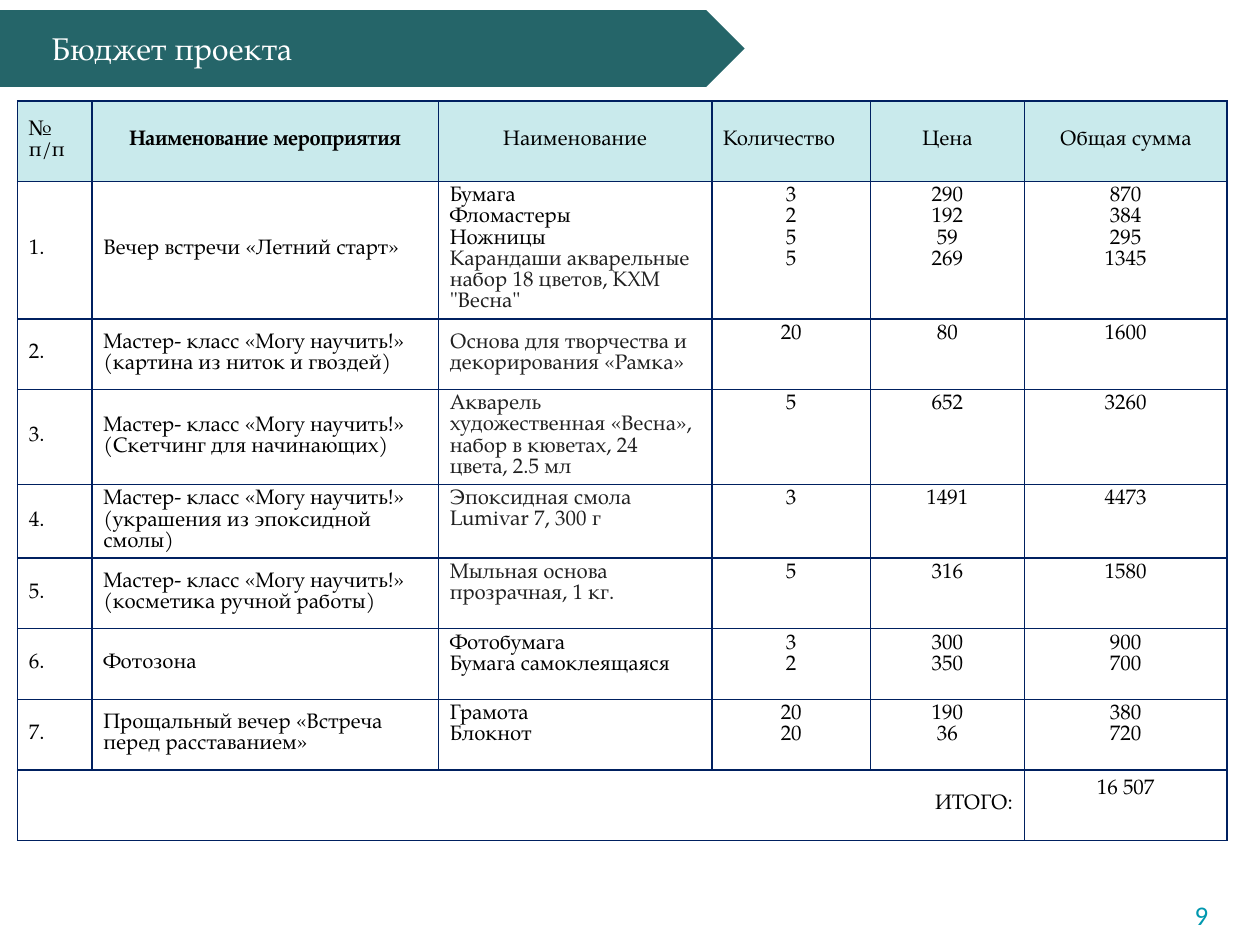
"""Build the project budget slide with its table of events and costs."""
from dataclasses import dataclass

from lxml.etree import SubElement
from pptx import Presentation
from pptx.dml.color import RGBColor
from pptx.enum.shapes import MSO_SHAPE
from pptx.enum.text import MSO_ANCHOR, PP_ALIGN
from pptx.oxml.ns import qn
from pptx.util import Inches, Pt


@dataclass(frozen=True)
class Theme:
    """Colours, fonts and type sizes of the deck."""
    ribbon: str = "256569"
    header: str = "C9EAEC"
    paper: str = "FFFFFF"
    border: str = "002060"
    ink: str = "000000"
    soft_ink: str = "212121"
    accent: str = "0098AF"
    serif: str = "TeX Gyre Pagella"
    sans: str = "Calibri"
    title_size: float = 18
    body_size: float = 12
    number_size: float = 15.4
    border_width: float = 1


THEME = Theme()
UNIT = 0.1
COLUMN_WIDTHS = [5.9, 27.5, 21.7, 12.6, 12.2, 16.1]
HEADER_HEIGHT, ROW_HEIGHT = 6.4, 5.6
HEADINGS = ["№\nп/п", "Наименование мероприятия", "Наименование", "Количество", "Цена", "Общая сумма"]
CENTRED_HEADINGS = {1, 2, 4, 5}
BOLD_HEADING = 1
MIDDLE_ITEMS_ROW = 2
SOFT, INK = THEME.soft_ink, THEME.ink
EVENTS = [
    ("Вечер встречи «Летний старт»", [
        ("Бумага", "3", "290", "870", INK),
        ("Фломастеры", "2", "192", "384", INK),
        ("Ножницы", "5", "59", "295", INK),
        ("Карандаши акварельные набор 18 цветов, КХМ \"Весна\"", "5", "269", "1345", SOFT),
    ]),
    ("Мастер- класс «Могу научить!» (картина из ниток и гвоздей)", [
        ("Основа для творчества и декорирования «Рамка»", "20", "80", "1600", SOFT),
    ]),
    ("Мастер- класс «Могу научить!» (Скетчинг для начинающих)", [
        ("Акварель художественная «Весна», набор в кюветах, 24 цвета, 2.5 мл", "5", "652", "3260", SOFT),
    ]),
    ("Мастер- класс «Могу научить!» (украшения из эпоксидной смолы)", [
        ("Эпоксидная смола Lumivar 7, 300 г", "3", "1491", "4473", SOFT),
    ]),
    ("Мастер- класс «Могу научить!» (косметика ручной работы)", [
        ("Мыльная основа прозрачная, 1 кг.", "5", "316", "1580", SOFT),
    ]),
    ("Фотозона", [
        ("Фотобумага", "3", "300", "900", INK),
        ("Бумага самоклеящаяся", "2", "350", "700", INK),
    ]),
    ("Прощальный вечер «Встреча перед расставанием»", [
        ("Грамота", "20", "190", "380", INK),
        ("Блокнот", "20", "36", "720", INK),
    ]),
]


def grid(*units):
    """Turn grid units into lengths."""
    return [Inches(unit * UNIT) for unit in units]


class SlideBuilder:
    """Draws styled elements on the current slide."""

    def __init__(self, deck, theme):
        """Add a title-only slide to the deck."""
        self.theme = theme
        self.slide = deck.slides.add_slide(deck.slide_layouts[5])

    def fill_text(self, frame, lines, size=None, font=None, align=PP_ALIGN.LEFT, bold=False, spacing=None):
        """Fill a text frame with one paragraph for each text and colour."""
        for index, (text, color) in enumerate(lines):
            para = frame.add_paragraph() if index else frame.paragraphs[0]
            para.alignment = align
            if spacing:
                para.line_spacing = spacing
            span = para.add_run()
            span.text = text
            span.font.size = Pt(size or self.theme.body_size)
            span.font.name = font or self.theme.serif
            span.font.bold = bold
            span.font.color.rgb = RGBColor.from_string(color)

    def inset(self, box, horizontal, vertical):
        """Set equal margins on opposite sides."""
        box.margin_left = box.margin_right = Inches(horizontal)
        box.margin_top = box.margin_bottom = Inches(vertical)

    def ribbon(self, *place):
        """Draw the pointed band behind the title."""
        band = self.slide.shapes.add_shape(MSO_SHAPE.PENTAGON, *grid(*place))
        band.shadow.inherit = False
        band.fill.solid()
        band.fill.fore_color.rgb = RGBColor.from_string(self.theme.ribbon)
        band.line.fill.background()
        self.slide.shapes.title._element.addprevious(band._element)

    def title(self, text, *place):
        """Move and format the title placeholder."""
        box = self.slide.shapes.title
        box.left, box.top, box.width, box.height = grid(*place)
        frame = box.text_frame
        frame.word_wrap = True
        frame.vertical_anchor = MSO_ANCHOR.MIDDLE
        self.inset(frame, 0.11, 0.06)
        self.fill_text(frame, [(text, self.theme.paper)], self.theme.title_size, spacing=0.85)

    def page_number(self, text, *place):
        """Add the page number."""
        frame = self.slide.shapes.add_textbox(*grid(*place)).text_frame
        frame.word_wrap = True
        self.inset(frame, 0.09, 0.04)
        self.fill_text(frame, [(text, self.theme.accent)], self.theme.number_size, self.theme.sans)

    def table(self, left, top, widths, heights):
        """Add a plain bordered table with a coloured header row."""
        frame = self.slide.shapes.add_table(
            len(heights), len(widths), *grid(left, top, sum(widths), sum(heights)))
        table = frame.table
        table.horz_banding = table.first_row = False
        for column, width in zip(table.columns, grid(*widths)):
            column.width = width
        for index, (row, height) in enumerate(zip(table.rows, grid(*heights))):
            row.height = height
            for cell in row.cells:
                self.dress(cell, self.theme.paper if index else self.theme.header)
        return table

    def dress(self, cell, color):
        """Give a cell its margins, borders and fill."""
        self.inset(cell, 0.09, 0.04)
        properties = cell._tc.get_or_add_tcPr()
        for side in ("a:lnL", "a:lnR", "a:lnT", "a:lnB"):
            line = SubElement(properties, qn(side), w=str(Pt(self.theme.border_width)))
            fill = SubElement(line, qn("a:solidFill"))
            SubElement(fill, qn("a:srgbClr"), val=self.theme.border)
        cell.fill.solid()
        cell.fill.fore_color.rgb = RGBColor.from_string(color)

    def cell(self, cell, lines, align=PP_ALIGN.LEFT, anchor=MSO_ANCHOR.MIDDLE, bold=False):
        """Set the lines of a table cell."""
        cell.vertical_anchor = anchor
        self.fill_text(cell.text_frame, lines, align=align, bold=bold)

    def budget(self, left, top):
        """Fill the budget table with headings, events and the total."""
        heights = [HEADER_HEIGHT] + [ROW_HEIGHT] * (len(EVENTS) + 1)
        table = self.table(left, top, COLUMN_WIDTHS, heights)
        for column, heading in enumerate(HEADINGS):
            align = PP_ALIGN.CENTER if column in CENTRED_HEADINGS else PP_ALIGN.LEFT
            lines = [(text, INK) for text in heading.split("\n")]
            self.cell(table.cell(0, column), lines, align, bold=column == BOLD_HEADING)
        for row, (event, items) in enumerate(EVENTS, start=1):
            self.cell(table.cell(row, 0), [(f"{row}.", INK)])
            self.cell(table.cell(row, 1), [(event, INK)])
            names, *figures, colors = zip(*items)
            anchor = MSO_ANCHOR.MIDDLE if row == MIDDLE_ITEMS_ROW else MSO_ANCHOR.TOP
            self.cell(table.cell(row, 2), zip(names, colors), anchor=anchor)
            for column, values in enumerate(figures, start=3):
                lines = [(value, INK) for value in values]
                self.cell(table.cell(row, column), lines, PP_ALIGN.CENTER, MSO_ANCHOR.TOP)
        last_row, last_column = len(EVENTS) + 1, len(HEADINGS) - 1
        label, total = table.cell(last_row, 0), table.cell(last_row, last_column)
        label.merge(table.cell(last_row, last_column - 1))
        self.cell(label, [("ИТОГО:", INK)], PP_ALIGN.RIGHT)
        self.cell(total, [("16 507", INK)], PP_ALIGN.CENTER)
        total.margin_bottom = Inches(0.29)


def main():
    """Build and save the deck."""
    deck = Presentation()
    deck.slide_width, deck.slide_height = grid(100, 75)
    page = SlideBuilder(deck, THEME)
    page.ribbon(0, 0.8, 59.1, 6.1)
    page.title("Бюджет проекта", 3, 1.9, 33.4, 4.3)
    page.budget(1.4, 8)
    page.page_number("9", 93.9, 70.9, 4.5, 2.7)
    deck.save("out.pptx")


if __name__ == "__main__":
    main()
